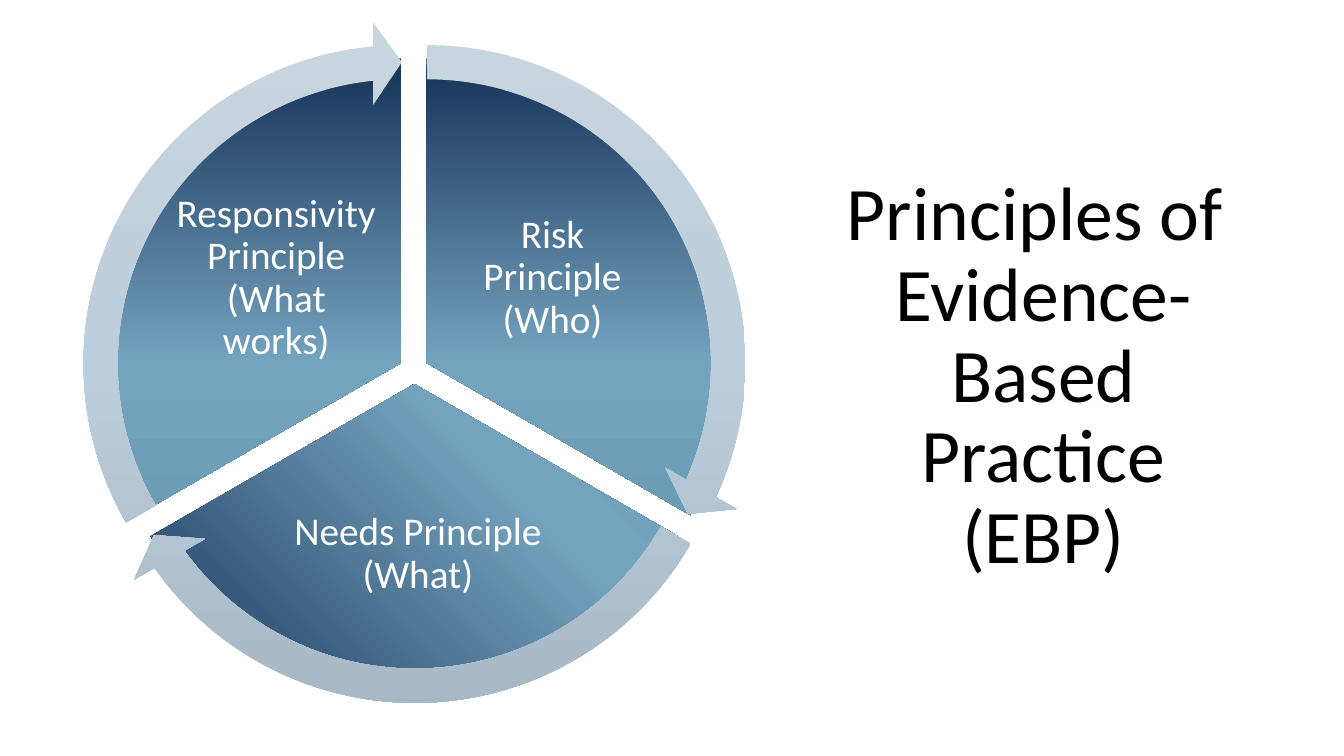
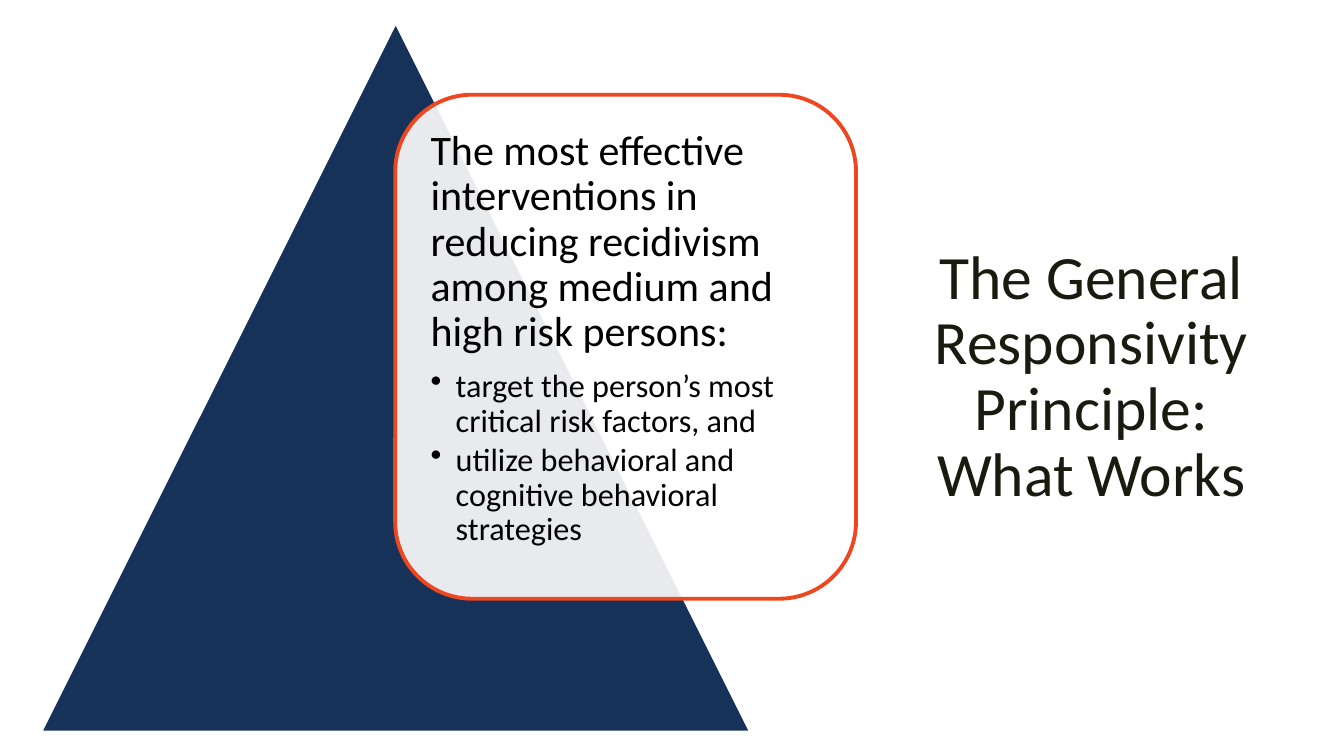
"""Build two slides on the principles of evidence-based practice."""
from copy import deepcopy
from dataclasses import dataclass
from typing import Any

from pptx import Presentation
from pptx import util as u
from pptx.dml.color import RGBColor
from pptx.enum import shapes, text
from pptx.oxml import ns, xmlchemy
from pptx.oxml.xmlchemy import OxmlElement

PX = 9144
FONT = "Calibri"
COLORS = {
    "navy": "163258", "sky": "74A3BE", "steel": "6392AD",
    "mist": "C7D5DF", "haze": "BCCEDB", "slate": "A5B7C4",
    "orange": "EE4720", "white": "FFFFFF", "black": "000000", "olive": "191B0E",
}
PIE_STOPS = ("navy", "sky", "steel")
ARROW_STOPS = ("mist", "haze", "slate")
PIE_SIZE, ARROW_SIZE = 604, 679
DOWN, UP_RIGHT = 270, 45
CENTERED = {"alignment": text.PP_ALIGN.CENTER, "line_spacing": 0.9}
TITLE_FORMAT = {"alignment": text.PP_ALIGN.CENTER, "line_spacing": 0.89}
MIDDLE = text.MSO_ANCHOR.MIDDLE


@dataclass(frozen=True)
class Box:
    left: int
    top: int
    width: int
    height: int

    def emu(self) -> tuple[int, ...]:
        return tuple(side * PX for side in (self.left, self.top, self.width, self.height))


@dataclass(frozen=True)
class Sector:
    label: str
    label_box: Box
    left: int
    top: int
    pie_angles: tuple[float, float]
    arrow_angles: tuple[float, float]
    gradient_angle: int


@dataclass(frozen=True)
class Line:
    words: str
    size: int
    color: str
    format: dict[str, Any]
    bullet: bool = False


SECTORS = (
    Sector("Risk Principle (Who)", Box(440, 186, 216, 180), 121, 58,
           (162, 18), (14.72, 161.99), DOWN),
    Sector("Needs Principle (What)", Box(253, 471, 323, 158), 109, 79,
           (18, 90), (86.72, 18), UP_RIGHT),
    Sector("Responsivity Principle (What works)", Box(166, 186, 216, 180), 96, 58,
           (90, 162), (158.73, 90), DOWN),
)
INTERVENTIONS = (
    Line("The most effective interventions in reducing recidivism among medium "
         "and high risk persons:", 30, "black",
         {"line_spacing": 0.9, "space_after": u.Pt(10)}),
    *(Line(words, 23, "black",
           {"level": 1, "line_spacing": 0.9, "space_after": u.Pt(3)}, True)
      for words in ("target the person’s most critical risk factors, and",
                    "utilize behavioral and cognitive behavioral strategies")),
)


def set_values(target: Any, values: dict[str, Any]) -> None:
    for name, value in values.items():
        setattr(target, name, value)


def rgb(color: str) -> RGBColor:
    return RGBColor.from_string(COLORS[color])


def add_bullet(paragraph: Any) -> None:
    properties = paragraph._p.get_or_add_pPr()
    properties.set("marL", str(25 * PX))
    properties.set("indent", str(-25 * PX))
    bullet = OxmlElement("a:buChar")
    bullet.set("char", "•")
    properties.append(bullet)


def add_text(slide: Any, box: Box, lines: tuple[Line, ...], inset: int,
             anchor: Any = text.MSO_ANCHOR.TOP) -> None:
    frame = slide.shapes.add_textbox(*box.emu()).text_frame
    margins = {f"margin_{side}": inset * PX for side in ("left", "top", "right", "bottom")}
    set_values(frame, {"word_wrap": True, "vertical_anchor": anchor, **margins})
    for index, line in enumerate(lines):
        paragraph = frame.add_paragraph() if index else frame.paragraphs[0]
        paragraph.text = line.words
        set_values(paragraph, line.format)
        for run in paragraph.runs:
            set_values(run.font, {"name": FONT, "size": u.Pt(line.size)})
            run.font.color.rgb = rgb(line.color)
        if line.bullet:
            add_bullet(paragraph)


def add_title(slide: Any, box: Box, words: str, size: int, color: str) -> None:
    add_text(slide, box, (Line(words, size, color, TITLE_FORMAT),), 10, MIDDLE)


def add_shape(slide: Any, kind: Any, box: Box, adjustments: tuple[float, ...] = ()) -> Any:
    shape = slide.shapes.add_shape(kind, *box.emu())
    shape.shadow.inherit = False
    for index, value in enumerate(adjustments):
        shape.adjustments[index] = value
    return shape


def fill_gradient(shape: Any, colors: tuple[str, ...], angle: int) -> None:
    shape.line.fill.background()
    shape.fill.gradient()
    shape.fill.gradient_angle = angle
    stop_list = shape._element.spPr.find(f".//{ns.qn('a:gsLst')}")
    stop_list.append(deepcopy(stop_list[0]))
    for index, (stop, color) in enumerate(zip(shape.fill.gradient_stops, colors)):
        stop.position = index / (len(colors) - 1)
        stop.color.rgb = rgb(color)


def fill_solid(shape: Any, fill: str, line: str, width: float, opacity: int = 100) -> None:
    shape.fill.solid()
    shape.fill.fore_color.rgb = rgb(fill)
    shape.line.color.rgb = rgb(line)
    shape.line.width = u.Pt(width)
    if opacity < 100:
        alpha = OxmlElement("a:alpha")
        alpha.set("val", str(opacity * 1000))
        shape._element.spPr.find(f"{ns.qn('a:solidFill')}/{ns.qn('a:srgbClr')}").append(alpha)


def add_pie(slide: Any, sector: Sector) -> None:
    pie = add_shape(slide, shapes.MSO_SHAPE.PIE,
                    Box(sector.left, sector.top, PIE_SIZE, PIE_SIZE), sector.pie_angles)
    fill_gradient(pie, PIE_STOPS, sector.gradient_angle)
    add_text(slide, sector.label_box, (Line(sector.label, 28, "white", CENTERED),), 4, MIDDLE)


def add_arrow(slide: Any, sector: Sector) -> None:
    offset = (ARROW_SIZE - PIE_SIZE) // 2
    box = Box(sector.left - offset, sector.top - offset, ARROW_SIZE, ARROW_SIZE)
    arrow = add_shape(slide, shapes.MSO_SHAPE.CIRCULAR_ARROW, box,
                      (0.05, 3.28, *sector.arrow_angles, 0.06))
    fill_gradient(arrow, ARROW_STOPS, DOWN)


def build_principles(slide: Any) -> None:
    add_title(slide, Box(807, 70, 456, 610),
              "Principles of \vEvidence-Based Practice\v(EBP)", 54, "black")
    for draw in (add_pie, add_arrow):
        for sector in SECTORS:
            draw(slide, sector)


def build_responsivity(slide: Any) -> None:
    add_title(slide, Box(902, 70, 361, 610),
              "The General Responsivity Principle: What Works", 44, "olive")
    triangle = add_shape(slide, shapes.MSO_SHAPE.ISOSCELES_TRIANGLE, Box(41, 23, 703, 703))
    fill_solid(triangle, "navy", "white", 1.5)
    card = add_shape(slide, shapes.MSO_SHAPE.ROUNDED_RECTANGLE, Box(392, 94, 457, 500))
    fill_solid(card, "white", "orange", 2.75, 90)
    add_text(slide, Box(415, 116, 412, 455), INTERVENTIONS, 12)


def main() -> None:
    presentation = Presentation()
    set_values(presentation, {"slide_width": 1333 * PX, "slide_height": 750 * PX})
    for build in (build_principles, build_responsivity):
        build(presentation.slides.add_slide(presentation.slide_layouts[6]))
    presentation.save("out.pptx")


if __name__ == "__main__":
    main()
